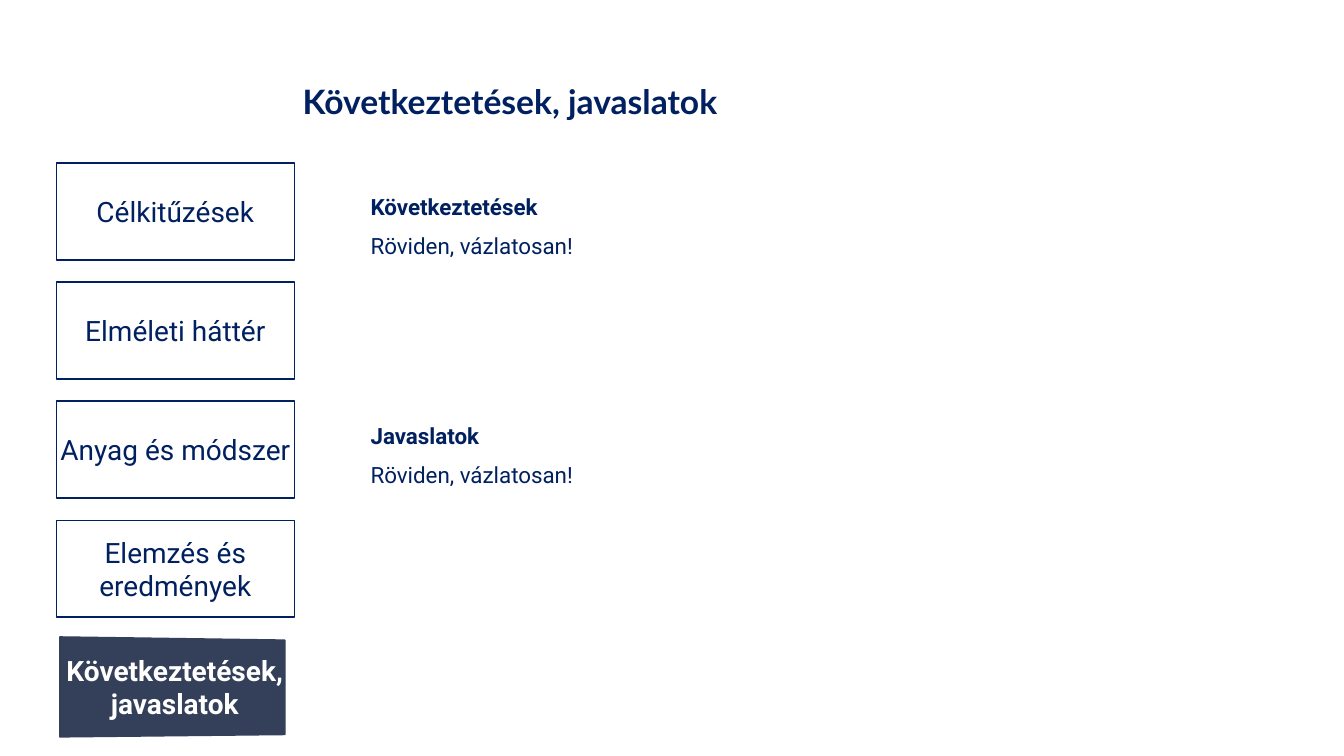
import pptx
import pptx.util
import pptx.dml.color
import pptx.enum.shapes
import pptx.enum.text

Cm = pptx.util.Cm
Pt = pptx.util.Pt
Shape = pptx.enum.shapes.MSO_SHAPE
Align = pptx.enum.text.PP_ALIGN
Anchor = pptx.enum.text.MSO_ANCHOR
Fit = pptx.enum.text.MSO_AUTO_SIZE

NAVY, WHITE, SLATE = "002060", "FFFFFF", "343F59"
TITLE = "Következtetések, javaslatok"
STEPS = ["Célkitűzések", "Elméleti háttér", "Anyag és módszer", "Elemzés és eredmények"]
NOW = "Következtetések, javaslatok"
NOTES = [
    (4.83, "Következtetések", "Röviden, vázlatosan!"),
    (10.6, "Javaslatok", "Röviden, vázlatosan!"),
]
LEFT, TOP, WIDE, HIGH, PITCH = 1.42, 4.11, 6, 2.44, 3
CORNERS = [(1.51, 16.05), (7.18, 16.13), (7.18, 18.51), (1.51, 18.57)]


def color(code):
    return pptx.dml.color.RGBColor.from_string(code)


def write(para, text, size, face, code, bold=False):
    run = para.add_run()
    run.text = text
    run.font.size = Pt(size)
    run.font.name = face
    run.font.bold = bold
    run.font.color.rgb = color(code)


def label(shape, text, fill, line, ink, bold=False, inset=0):
    shape.shadow.inherit = False
    shape.fill.solid()
    shape.fill.fore_color.rgb = color(fill)
    shape.line.color.rgb = color(line)
    shape.line.width = Pt(1)
    frame = shape.text_frame
    frame.word_wrap = True
    frame.vertical_anchor = Anchor.MIDDLE
    frame.margin_left = Cm(inset)
    frame.margin_right = frame.margin_top = frame.margin_bottom = 0
    para = frame.paragraphs[0]
    para.alignment = Align.CENTER
    write(para, text, 20, "Roboto", ink, bold)


def main():
    deck = pptx.Presentation()
    deck.slide_width, deck.slide_height = Cm(33.87), Cm(19.05)
    slide = deck.slides.add_slide(deck.slide_layouts[5])
    shapes = slide.shapes

    title = shapes.title
    title.left, title.top = Cm(7.37), Cm(1.93)
    title.width, title.height = Cm(19.15), Cm(1.27)
    frame = title.text_frame
    frame.auto_size = Fit.NONE
    frame.word_wrap = True
    frame.vertical_anchor = Anchor.BOTTOM
    para = frame.paragraphs[0]
    para.alignment = Align.LEFT
    para.line_spacing = 0.9
    write(para, TITLE, 24, "Lato", NAVY, True)

    for i, step in enumerate(STEPS):
        box = shapes.add_shape(Shape.ROUNDED_RECTANGLE, Cm(LEFT), Cm(TOP + i * PITCH), Cm(WIDE), Cm(HIGH))
        box.adjustments[0] = 0
        label(box, step, WHITE, NAVY, NAVY)

    points = [(Cm(x), Cm(y)) for x, y in CORNERS]
    form = shapes.build_freeform(*points[0])
    form.add_line_segments(points[1:], close=True)
    label(form.convert_to_shape(), NOW, SLATE, SLATE, WHITE, True, 0.12)

    for top, head, body in NOTES:
        frame = shapes.add_textbox(Cm(9.09), Cm(top), Cm(23.7), Cm(2)).text_frame
        frame.word_wrap = True
        first, second = frame.paragraphs[0], frame.add_paragraph()
        first.line_spacing = second.line_spacing = 0.9
        second.space_before = Pt(10)
        write(first, head, 16, "Roboto", NAVY, True)
        write(second, body, 16, "Roboto", NAVY)

    deck.save("out.pptx")


if __name__ == "__main__":
    main()
